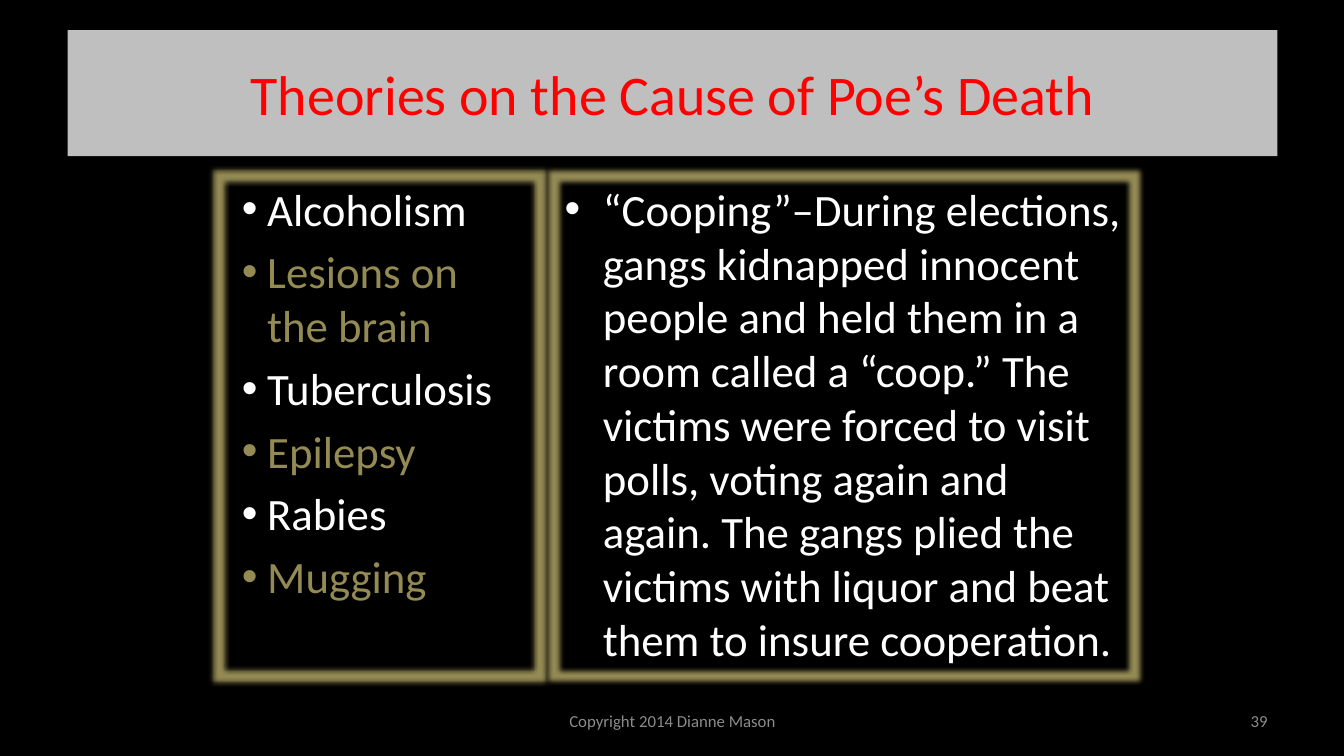
from lxml.etree import SubElement
from pptx import Presentation
from pptx.dml.color import RGBColor
from pptx.enum.text import MSO_ANCHOR as Anchor, MSO_AUTO_SIZE as AutoSize, PP_ALIGN as Align
from pptx.oxml.ns import qn
from pptx.util import Inches, Pt

BLACK = RGBColor(0x00, 0x00, 0x00)
WHITE = RGBColor(0xFF, 0xFF, 0xFF)
SILVER = RGBColor(0xBF, 0xBF, 0xBF)
RED = RGBColor(0xFF, 0x00, 0x00)
OLIVE = RGBColor(0x94, 0x8A, 0x54)
GRAY = RGBColor(0x8C, 0x8C, 0x8C)

CAUSES = ["Alcoholism", "Lesions on the brain", "Tuberculosis", "Epilepsy", "Rabies", "Mugging"]
COOPING = [
    "“Cooping”–During elections, gangs kidnapped innocent people and held them in a room "
    "called a “coop.” The victims were forced to visit polls, voting again and again. "
    "The gangs plied the victims with liquor and beat them to insure cooperation."
]


def place(sp, box):
    """Move a shape to a box of left, top, width and height in inches."""
    sp.left, sp.top, sp.width, sp.height = map(Inches, box)


def style(p, size, color):
    """Format every run of a paragraph."""
    for r in p.runs:
        r.font.name = "Calibri"
        r.font.size = Pt(size)
        r.font.color.rgb = color


def add_title(sp, box, text):
    """Fill the title placeholder as a silver banner."""
    place(sp, box)
    sp.fill.solid()
    sp.fill.fore_color.rgb = SILVER
    tf = sp.text_frame
    tf.text = text
    tf.auto_size = AutoSize.NONE
    tf.vertical_anchor = Anchor.MIDDLE
    p = tf.paragraphs[0]
    p.alignment = Align.CENTER
    style(p, 40, RED)


def add_glow(sp, color, radius):
    """Give a shape a soft glow around its outline."""
    effects = SubElement(sp._element.spPr, qn("a:effectLst"))
    glow = SubElement(effects, qn("a:glow"), rad=str(radius))
    SubElement(glow, qn("a:srgbClr"), val=str(color))


def add_list(sp, box, items, hanging):
    """Fill a body placeholder with bullets of alternating colour in a glowing frame."""
    place(sp, box)
    sp.fill.background()
    sp.line.color.rgb = OLIVE
    sp.line.width = Pt(0.75)
    add_glow(sp, OLIVE, Pt(8))
    tf = sp.text_frame
    tf.text = "\n".join(items)
    tf.auto_size = AutoSize.NONE
    for i, p in enumerate(tf.paragraphs):
        pPr = p._p.get_or_add_pPr()
        pPr.set("marL", str(Inches(0.38)))
        pPr.set("indent", str(-Inches(hanging)))
        style(p, 32, (WHITE, OLIVE)[i % 2])


def add_footer(slide, box, text, align):
    """Add a small gray line of text at the foot of the slide."""
    sp = slide.shapes.add_textbox(*map(Inches, box))
    tf = sp.text_frame
    tf.word_wrap = True
    tf.vertical_anchor = Anchor.MIDDLE
    tf.text = text
    p = tf.paragraphs[0]
    p.alignment = align
    style(p, 12, GRAY)


def main():
    """Build the slide and save it."""
    prs = Presentation()
    prs.slide_width, prs.slide_height = Inches(13.33), Inches(7.5)
    slide = prs.slides.add_slide(prs.slide_layouts.get_by_name("Two Content"))
    slide.background.fill.solid()
    slide.background.fill.fore_color.rgb = BLACK
    title, causes, cooping = slide.placeholders
    add_title(title, (0.67, 0.3, 12, 1.25), "Theories on the Cause of Poe’s Death")
    add_list(causes, (2.17, 1.75, 3.17, 4.95), CAUSES, 0.25)
    add_list(cooping, (5.5, 1.75, 5.75, 4.95), COOPING, 0.38)
    add_footer(slide, (4.56, 6.95, 4.22, 0.4), "Copyright 2014 Dianne Mason", Align.CENTER)
    add_footer(slide, (9.56, 6.95, 3.11, 0.4), "39", Align.RIGHT)
    prs.save("out.pptx")


if __name__ == "__main__":
    main()
